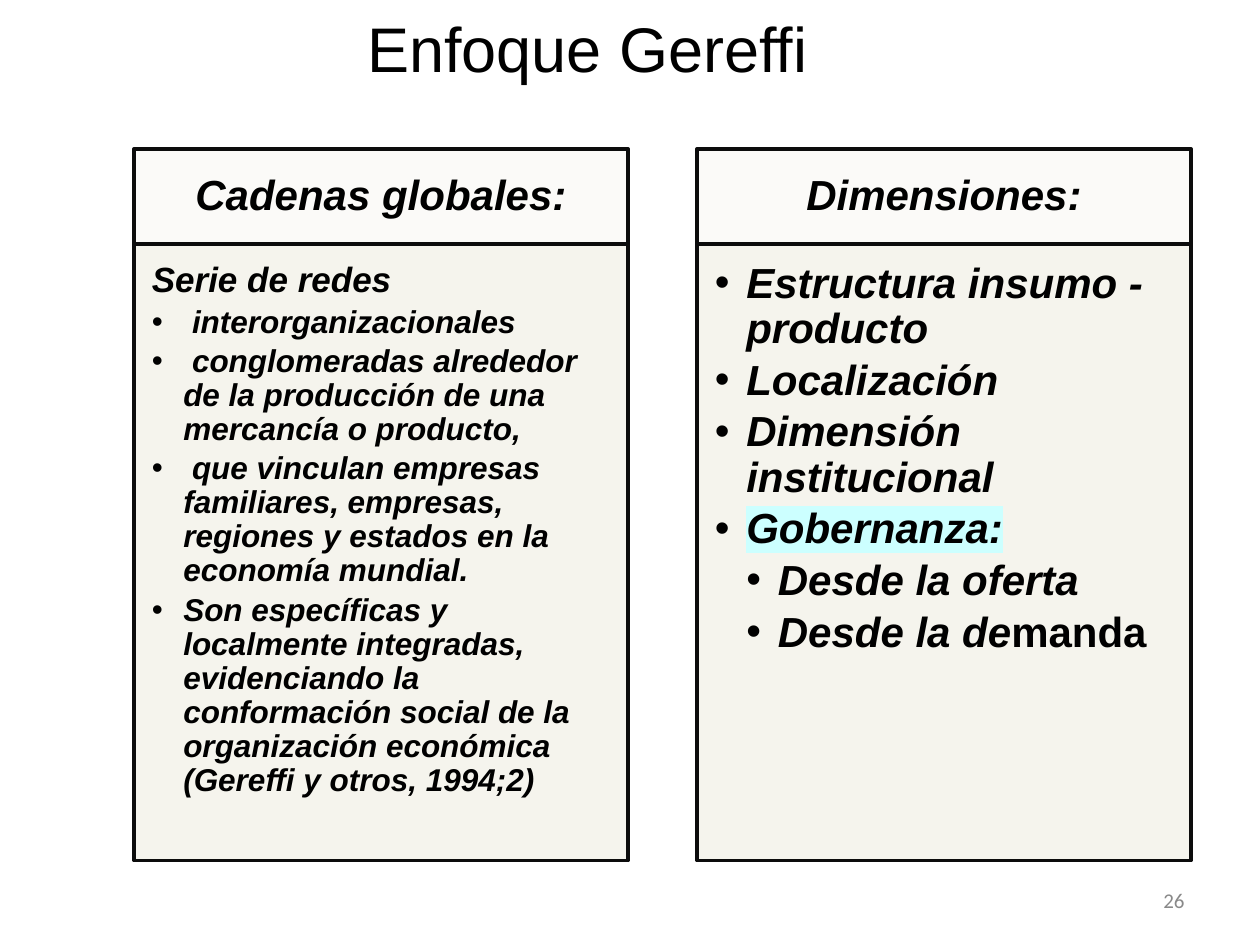
from dataclasses import dataclass

from lxml import etree
from pptx import Presentation
from pptx.dml.color import RGBColor
from pptx.enum.text import MSO_ANCHOR, MSO_AUTO_SIZE, PP_ALIGN
from pptx.oxml.ns import qn
from pptx.util import Cm, Pt

MID, TOP = MSO_ANCHOR.MIDDLE, MSO_ANCHOR.TOP
LEFT, CENTER, RIGHT = PP_ALIGN.LEFT, PP_ALIGN.CENTER, PP_ALIGN.RIGHT
FIXED = MSO_AUTO_SIZE.NONE


@dataclass
class Theme:
    face: str = "Arial"
    num_face: str = "Calibri"
    ink: str = "000000"
    edge: str = "0C0C0C"
    head: str = "FBFAF8"
    body: str = "F4F3EC"
    mark: str = "CCFFFF"
    gray: str = "898989"
    title_size: int = 36
    head_size: int = 24
    lead_size: int = 20
    item_size: int = 18
    num_size: int = 12


@dataclass
class Item:
    text: str
    size: int
    level: int = 1
    bullet: bool = True
    mark: bool = False
    tail: str = ""  # closing words set upright
    gap: float = 3.6


class Deck:
    def __init__(self, theme):
        self.theme = theme
        self.prs = Presentation()
        self.prs.slide_width, self.prs.slide_height = Cm(25.4), Cm(19.05)
        self.slide = self.prs.slides.add_slide(self.prs.slide_layouts[4])

    def place(self, shape, box, anchor, pad):
        """Move a shape to box and set its text margins, all in cm."""
        shape.left, shape.top, shape.width, shape.height = map(Cm, box)
        frame = shape.text_frame
        frame.word_wrap, frame.auto_size = True, FIXED
        frame.vertical_anchor = anchor
        (frame.margin_left, frame.margin_top,
         frame.margin_right, frame.margin_bottom) = map(Cm, pad)
        return frame

    def style(self, para, size, align=LEFT, bold=False, color=None, face=None):
        para.alignment = align
        font = para.font
        font.size, font.name = Pt(size), face or self.theme.face
        font.bold = font.italic = bold
        font.color.rgb = RGBColor.from_string(color or self.theme.ink)

    def panel(self, shape, color, alpha=100):
        shape.fill.solid()
        shape.fill.fore_color.rgb = RGBColor.from_string(color)
        if alpha < 100:
            tone = shape.fill._xPr.find(".//" + qn("a:srgbClr"))
            etree.SubElement(tone, qn("a:alpha"), val=str(alpha * 1000))
        shape.line.color.rgb = RGBColor.from_string(self.theme.edge)
        shape.line.width = Pt(2)

    def label(self, shape, text, box, size, align, color=None, face=None):
        frame = self.place(shape, box, MID, (0.25, 0.13, 0.25, 0.13))
        frame.text = text
        self.style(frame.paragraphs[0], size, align, color=color, face=face)

    def title(self, text, box):
        self.label(self.slide.shapes.title, text, box,
                   self.theme.title_size, CENTER)

    def number(self, text, box):
        self.label(self.slide.shapes.add_textbox(0, 0, 0, 0), text, box,
                   self.theme.num_size, RIGHT, self.theme.gray,
                   self.theme.num_face)

    def header(self, index, text, box):
        shape = self.slide.placeholders[index]
        self.panel(shape, self.theme.head)
        frame = self.place(shape, box, MID, (0.48, 0.28, 0.48, 0.28))
        frame.text = text
        para = frame.paragraphs[0]
        para.line_spacing, para.space_before = 0.9, Pt(0)
        self.style(para, self.theme.head_size, CENTER, bold=True)

    def bullet(self, para, item):
        props = para._p.get_or_add_pPr()
        props.set("marL", str(Cm(0.635 * item.level)))
        props.set("indent", str(Cm(-0.635)))
        if not item.bullet:
            etree.SubElement(props, qn("a:buNone"))
            return
        tone = etree.SubElement(props, qn("a:buClr"))
        etree.SubElement(tone, qn("a:srgbClr"), val=self.theme.ink)
        etree.SubElement(props, qn("a:buFont"), typeface=self.theme.face)
        etree.SubElement(props, qn("a:buChar"), char="•")

    def items(self, index, rows, box):
        shape = self.slide.placeholders[index]
        self.panel(shape, self.theme.body, 90)
        frame = self.place(shape, box, TOP, (0.36, 0.36, 0.48, 0.53))
        for i, item in enumerate(rows):
            para = frame.add_paragraph() if i else frame.paragraphs[0]
            para.level = item.level
            para.line_spacing = 0.9
            para.space_before = Pt(item.gap if i else 0)
            self.bullet(para, item)
            self.style(para, item.size, bold=True)
            run = para.add_run()
            run.text = item.text
            if item.mark:
                glow = etree.SubElement(run._r.get_or_add_rPr(),
                                        qn("a:highlight"))
                etree.SubElement(glow, qn("a:srgbClr"), val=self.theme.mark)
            if item.tail:
                end = para.add_run()
                end.text = item.tail
                end.font.italic = False

    def save(self):
        self.prs.save("out.pptx")


def main():
    theme = Theme()
    big, lead, small = theme.head_size, theme.lead_size, theme.item_size
    chains = [
        Item("Serie de redes", lead, bullet=False),
        Item(" interorganizacionales", small),
        Item(" conglomeradas alrededor de la producción de una mercancía "
             "o producto,", small, gap=3),
        Item(" que vinculan empresas familiares, empresas, regiones y "
             "estados en la economía mundial.", small, gap=3),
        Item("Son específicas y localmente integradas, evidenciando la "
             "conformación social de la organización económica "
             "(Gereffi y otros, 1994;2)", small, gap=3),
    ]
    sides = [
        Item("Estructura insumo - producto", big),
        Item("Localización", big),
        Item("Dimensión institucional", big),
        Item("Gobernanza:", big, mark=True),
        Item("Desde la oferta", big, level=2),
        Item("Desde la de", big, level=2, tail="manda"),
    ]
    deck = Deck(theme)
    deck.title("Enfoque Gereffi", (1.78, 0, 20.12, 1.9))
    left, step, width = 2.7, 11.35, 9.96
    top, head, body = 3, 1.92, 12.43
    columns = [("Cadenas globales:", chains), ("Dimensiones:", sides)]
    for i, (name, rows) in enumerate(columns):
        x = left + i * step
        deck.header(1 + 2 * i, name, (x, top, width, head))
        deck.items(2 + 2 * i, rows, (x, top + head, width, body))
    deck.number("26", (18.2, 17.65, 5.93, 1.01))
    deck.save()


if __name__ == "__main__":
    main()
